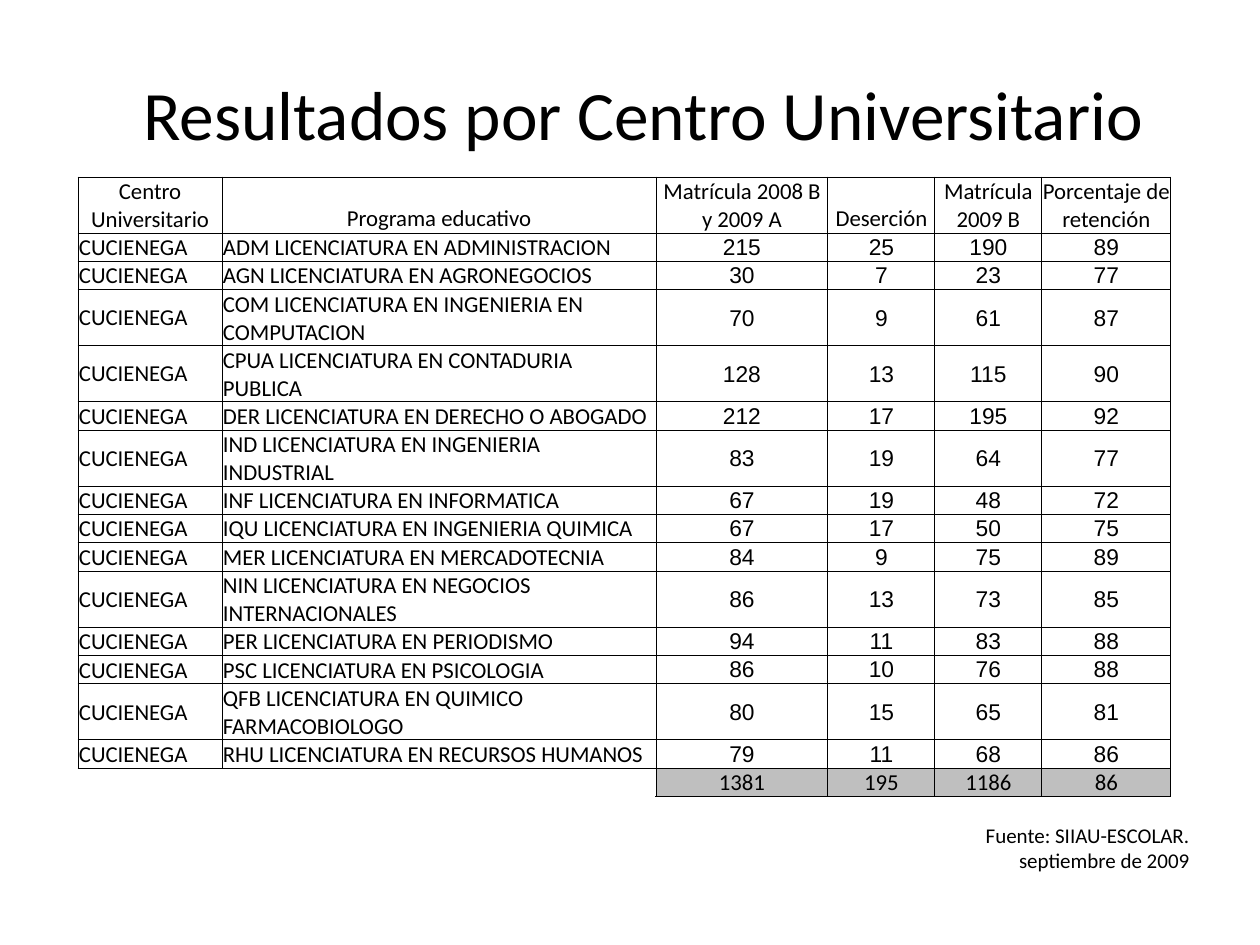
"""Build the slide with the retention results of one university centre."""
import pptx
import pptx.dml.color
import pptx.enum.text
import pptx.oxml
import pptx.oxml.ns
import pptx.util

PX = 914400 / 126
COLORS = {"text": "000000", "border": "000000", "body": "FFFFFF", "total": "BFBFBF"}
ALIGN = pptx.enum.text.PP_ALIGN
ANCHOR = pptx.enum.text.MSO_ANCHOR
CENTER = "CUCIENEGA"
NO_GRID_STYLE = "{2D5ABB26-0587-4C30-8999-92F81FD0307C}"

HEADINGS = ["Centro Universitario", "Programa educativo", "Matrícula 2008 B y 2009 A",
            "Deserción", "Matrícula 2009 B", "Porcentaje de retención"]
PROGRAMS = [
    ("ADM LICENCIATURA EN ADMINISTRACION", 215, 25, 190, 89),
    ("AGN LICENCIATURA EN AGRONEGOCIOS", 30, 7, 23, 77),
    ("COM LICENCIATURA EN INGENIERIA EN COMPUTACION", 70, 9, 61, 87),
    ("CPUA LICENCIATURA EN CONTADURIA PUBLICA", 128, 13, 115, 90),
    ("DER LICENCIATURA EN DERECHO O ABOGADO", 212, 17, 195, 92),
    ("IND LICENCIATURA EN INGENIERIA INDUSTRIAL", 83, 19, 64, 77),
    ("INF LICENCIATURA EN INFORMATICA", 67, 19, 48, 72),
    ("IQU LICENCIATURA EN INGENIERIA QUIMICA", 67, 17, 50, 75),
    ("MER LICENCIATURA EN MERCADOTECNIA", 84, 9, 75, 89),
    ("NIN LICENCIATURA EN NEGOCIOS INTERNACIONALES", 86, 13, 73, 85),
    ("PER LICENCIATURA EN PERIODISMO", 94, 11, 83, 88),
    ("PSC LICENCIATURA EN PSICOLOGIA", 86, 10, 76, 88),
    ("QFB LICENCIATURA EN QUIMICO FARMACOBIOLOGO", 80, 15, 65, 81),
    ("RHU LICENCIATURA EN RECURSOS HUMANOS", 79, 11, 68, 86),
]
TOTALS = ["", "", 1381, 195, 1186, 86]
TALL_ROWS = {0, 3, 4, 6, 10, 13}
COLUMN_WIDTHS = [144, 434, 172, 107, 107, 129]


def px(*lengths):
    return [pptx.util.Emu(round(length * PX)) for length in lengths]


def write(paragraph, text, size, align, font="Calibri"):
    paragraph.alignment = align
    run = paragraph.add_run()
    run.text = text
    for attribute, value in {"name": font, "size": pptx.util.Pt(size)}.items():
        setattr(run.font, attribute, value)
    run.font.color.rgb = pptx.dml.color.RGBColor.from_string(COLORS["text"])


deck = pptx.Presentation()
deck.slide_width, deck.slide_height = px(1260, 945)
slide = deck.slides.add_slide(deck.slide_layouts[6])

text_blocks = [
    ((108, 39, 1071, 147), ["Resultados por Centro Universitario"], 39.6, ALIGN.CENTER, ANCHOR.MIDDLE),
    ((876, 816, 326, 63), ["Fuente: SIIAU-ESCOLAR.", "septiembre de 2009"], 12, ALIGN.RIGHT, ANCHOR.TOP),
]
for place, lines, size, align, anchor in text_blocks:
    frame = slide.shapes.add_textbox(*px(*place)).text_frame
    for attribute, value in {"word_wrap": True, "vertical_anchor": anchor}.items():
        setattr(frame, attribute, value)
    for index, line in enumerate(lines):
        paragraph = frame.add_paragraph() if index else frame.paragraphs[0]
        write(paragraph, line, size, align)

records = [HEADINGS, *[(CENTER, *program) for program in PROGRAMS], TOTALS]
last_row = len(records) - 1
row_heights = [56 if row in TALL_ROWS else 28 for row in range(len(records))]
results = slide.shapes.add_table(
    len(records), len(HEADINGS), *px(78, 177, sum(COLUMN_WIDTHS), sum(row_heights))).table
for attribute in ("first_row", "horz_banding"):
    setattr(results, attribute, False)
results._tbl.tblPr.find(pptx.oxml.ns.qn("a:tableStyleId")).text = NO_GRID_STYLE
for column, width in zip(results.columns, px(*COLUMN_WIDTHS)):
    column.width = width
for row, height in zip(results.rows, px(*row_heights)):
    row.height = height

margin = px(1)[0]
cell_format = {"margin_left": margin, "margin_right": margin, "margin_top": margin, "margin_bottom": 0}
for row, record in enumerate(records):
    for column, value in enumerate(record):
        cell = results.cell(row, column)
        in_body = 0 < row < last_row
        anchor = ANCHOR.MIDDLE if in_body else ANCHOR.BOTTOM
        for attribute, setting in {**cell_format, "vertical_anchor": anchor}.items():
            setattr(cell, attribute, setting)

        paragraph = cell.text_frame.paragraphs[0]
        if value == "":
            paragraph._p.get_or_add_endParaRPr().set("sz", "1300")
            edges = "T" if column == 0 else "RT"
        else:
            align = ALIGN.LEFT if in_body and column < 2 else ALIGN.CENTER
            font = "Arial" if in_body and column > 1 else "Calibri"
            write(paragraph, str(value), 13, align, font)
            edges = "LRTB"

        for edge in edges:
            cell._tc.get_or_add_tcPr().append(pptx.oxml.parse_xml(
                f'<a:ln{edge} {pptx.oxml.ns.nsdecls("a")} w="6350"><a:solidFill>'
                f'<a:srgbClr val="{COLORS["border"]}"/></a:solidFill></a:ln{edge}>'))

        if row == last_row and column > 1:
            fill = COLORS["total"]
        else:
            fill = COLORS["body"] if in_body and column == 5 else None
        if fill:
            cell.fill.solid()
            cell.fill.fore_color.rgb = pptx.dml.color.RGBColor.from_string(fill)
        else:
            cell.fill.background()

deck.save("out.pptx")
